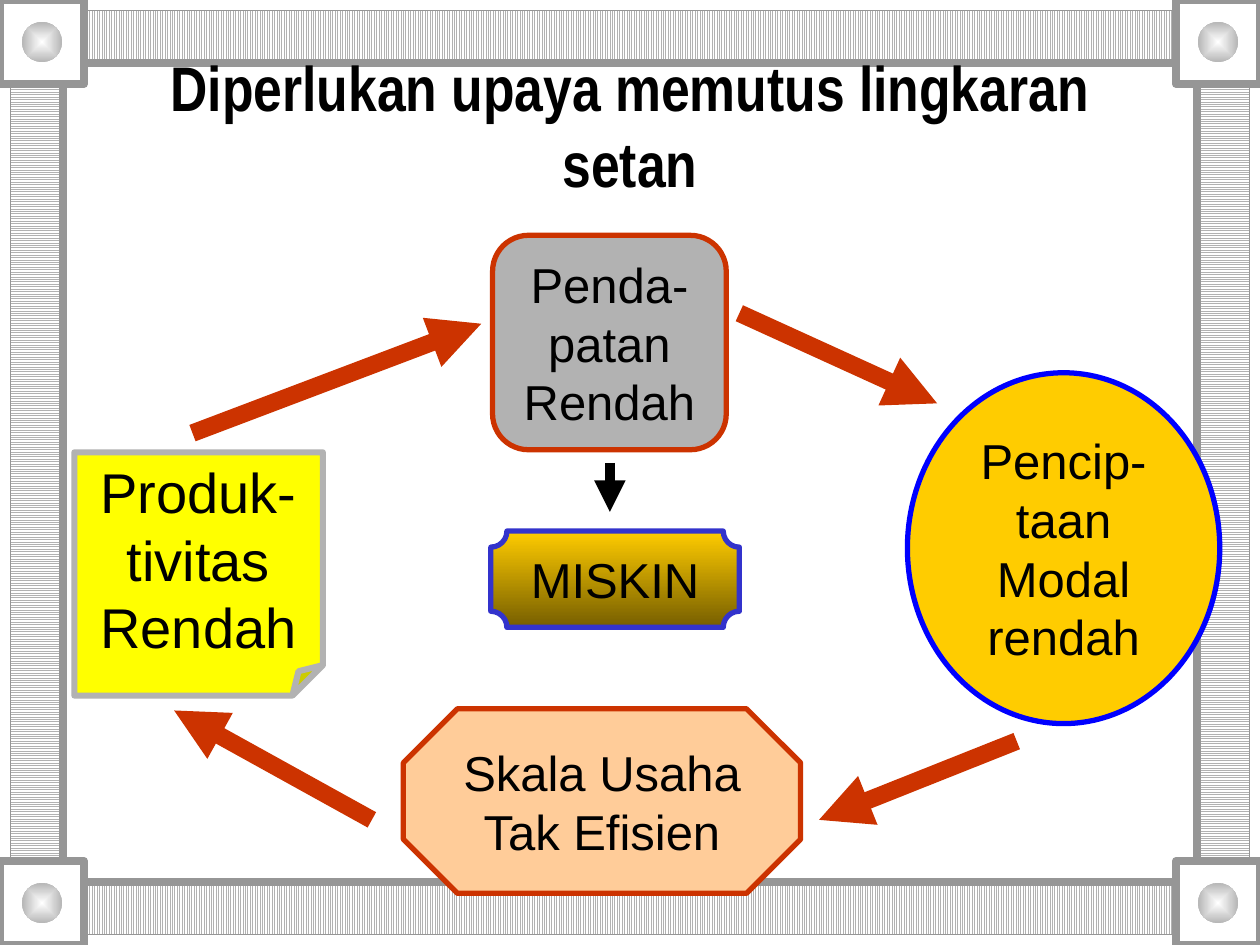
from dataclasses import dataclass
from itertools import product

from pptx import Presentation
from pptx.dml.color import RGBColor
from pptx.enum.dml import MSO_PATTERN
from pptx.enum.shapes import MSO_CONNECTOR, MSO_SHAPE
from pptx.enum.text import MSO_ANCHOR, PP_ALIGN
from pptx.oxml import parse_xml
from pptx.oxml.ns import nsdecls, qn
from pptx.shapes.autoshape import Shape
from pptx.slide import Slide
from pptx.text.text import TextFrame
from pptx.util import Pt

BLACK = RGBColor(0x00, 0x00, 0x00)
WHITE = RGBColor(0xFF, 0xFF, 0xFF)
SILVER = RGBColor(0xB2, 0xB2, 0xB2)
BALL_EDGE = RGBColor(0xB6, 0xB6, 0xB6)
FRAME_GRAY = RGBColor(0x96, 0x96, 0x96)
RUST = RGBColor(0xCC, 0x33, 0x00)
GOLD = RGBColor(0xFF, 0xCC, 0x00)
DARK_GOLD = RGBColor(0x76, 0x5E, 0x00)
PEACH = RGBColor(0xFF, 0xCC, 0x99)
YELLOW = RGBColor(0xFF, 0xFF, 0x00)
BLUE = RGBColor(0x00, 0x00, 0xFF)
INDIGO = RGBColor(0x33, 0x33, 0xCC)

WIDTH, HEIGHT = 720, 540
EDGE, BAND, CORNER, BALL = 6, 30, 48, 23
INNER = EDGE + BAND

Box = tuple[float, float, float, float]
Point = tuple[float, float]


@dataclass
class Node:
    text: str
    kind: MSO_SHAPE
    box: Box
    fill: RGBColor
    line: RGBColor
    line_width: float = 3
    size: float = 28
    adjustment: float | None = None
    fade_to: RGBColor | None = None


@dataclass
class Arrow:
    start: Point
    end: Point
    color: RGBColor = RUST
    width: float = 10


NODES = [
    Node("Penda-patan Rendah", MSO_SHAPE.ROUNDED_RECTANGLE,
         (281.5, 134.5, 133.5, 122.5), SILVER, RUST, adjustment=0.167),
    Node("Pencip-taan Modal rendah", MSO_SHAPE.OVAL,
         (518.5, 213, 178.5, 200.5), GOLD, BLUE),
    Node("Skala Usaha Tak Efisien", MSO_SHAPE.OCTAGON,
         (230.5, 405, 227, 105.5), PEACH, RUST, adjustment=0.293),
    Node("Produk-tivitas Rendah", MSO_SHAPE.FOLDED_CORNER,
         (42.5, 258.5, 142, 139), YELLOW, SILVER, 3.5, 32, 0.125),
    Node("MISKIN", MSO_SHAPE.PLAQUE,
         (280.5, 303.5, 142, 55), GOLD, INDIGO, adjustment=0.167, fade_to=DARK_GOLD),
]

ARROWS = [
    Arrow((348.5, 264.5), (348.5, 292.5), BLACK, 6),
    Arrow((422.5, 179), (535.5, 230.5)),
    Arrow((581, 423.5), (468, 468.5)),
    Arrow((212.5, 468.5), (99.5, 406)),
    Arrow((110, 247.5), (275, 185)),
]


def add_shape(slide: Slide, kind: MSO_SHAPE, box: Box, fill: RGBColor | None = None,
              line: RGBColor | None = None, line_width: float = 1) -> Shape:
    shape = slide.shapes.add_shape(kind, *(Pt(length) for length in box))
    shape.shadow.inherit = False
    if fill is None:
        shape.fill.background()
    else:
        shape.fill.solid()
        shape.fill.fore_color.rgb = fill
    if line is None:
        shape.line.fill.background()
    else:
        shape.line.color.rgb = line
        shape.line.width = Pt(line_width)
    return shape


def set_gradient(shape: Shape, first: RGBColor, last: RGBColor) -> None:
    shape.fill.gradient()
    shape.fill.gradient_angle = 270
    for stop, color in zip(shape.fill.gradient_stops, (first, last)):
        stop.color.rgb = color


def set_adjustment(shape: Shape, value: float) -> None:
    geometry = shape._element.spPr.find(qn("a:prstGeom"))
    geometry.replace(geometry.find(qn("a:avLst")), parse_xml(
        f'<a:avLst {nsdecls("a")}>'
        f'<a:gd name="adj" fmla="val {round(value * 100000)}"/></a:avLst>'))


def write_text(frame: TextFrame, text: str, size: float, font: str, bold: bool = False) -> None:
    frame.word_wrap = True
    frame.vertical_anchor = MSO_ANCHOR.MIDDLE
    paragraph = frame.paragraphs[0]
    paragraph.text = text
    paragraph.alignment = PP_ALIGN.CENTER
    paragraph.font.size = Pt(size)
    paragraph.font.name = font
    paragraph.font.bold = bold
    paragraph.font.color.rgb = BLACK


def add_band(slide: Slide, box: Box, pattern: MSO_PATTERN) -> None:
    band = add_shape(slide, MSO_SHAPE.RECTANGLE, box)
    band.fill.patterned()
    band.fill.pattern = pattern
    band.fill.fore_color.rgb = SILVER
    band.fill.back_color.rgb = WHITE


def add_corner(slide: Slide, left: float, top: float) -> None:
    add_shape(slide, MSO_SHAPE.RECTANGLE, (left, top, CORNER, CORNER), WHITE, FRAME_GRAY, 4.5)
    inset = (CORNER - BALL) / 2
    ball = add_shape(slide, MSO_SHAPE.OVAL, (left + inset, top + inset, BALL, BALL))
    set_gradient(ball, WHITE, BALL_EDGE)
    linear = ball._element.spPr.find(qn("a:gradFill")).find(qn("a:lin"))
    linear.getparent().replace(linear, parse_xml(
        f'<a:path {nsdecls("a")} path="shape">'
        '<a:fillToRect l="50000" t="50000" r="50000" b="50000"/></a:path>'))


def add_frame(slide: Slide) -> None:
    inner_width, inner_height = WIDTH - 2 * INNER, HEIGHT - 2 * INNER
    for top in (EDGE, HEIGHT - INNER):
        add_band(slide, (INNER, top, inner_width, BAND), MSO_PATTERN.NARROW_VERTICAL)
    for left in (EDGE, WIDTH - INNER):
        add_band(slide, (left, INNER, BAND, inner_height), MSO_PATTERN.NARROW_HORIZONTAL)
    for margin, line_width in ((INNER, 4.5), (EDGE, 1)):
        box = (margin, margin, WIDTH - 2 * margin, HEIGHT - 2 * margin)
        add_shape(slide, MSO_SHAPE.RECTANGLE, box, None, FRAME_GRAY, line_width)
    for left, top in product((0, WIDTH - CORNER), (0, HEIGHT - CORNER)):
        add_corner(slide, left, top)


def add_title(slide: Slide, text: str) -> None:
    title = slide.shapes.add_textbox(Pt(54), Pt(26), Pt(612), Pt(90))
    write_text(title.text_frame, text, 36, "Arial Narrow", bold=True)


def add_node(slide: Slide, node: Node) -> None:
    shape = add_shape(slide, node.kind, node.box, node.fill, node.line, node.line_width)
    if node.adjustment is not None:
        set_adjustment(shape, node.adjustment)
    if node.fade_to is not None:
        set_gradient(shape, node.fill, node.fade_to)
    write_text(shape.text_frame, node.text, node.size, "Arial")


def add_arrow(slide: Slide, arrow: Arrow) -> None:
    ends = (Pt(length) for length in (*arrow.start, *arrow.end))
    connector = slide.shapes.add_connector(MSO_CONNECTOR.STRAIGHT, *ends)
    connector.line.color.rgb = arrow.color
    connector.line.width = Pt(arrow.width)
    connector.line._get_or_add_ln().append(
        parse_xml(f'<a:tailEnd {nsdecls("a")} type="triangle"/>'))
    connector._element.spPr.append(parse_xml(f'<a:effectLst {nsdecls("a")}/>'))


def main() -> None:
    presentation = Presentation()
    presentation.slide_width, presentation.slide_height = Pt(WIDTH), Pt(HEIGHT)
    slide = presentation.slides.add_slide(presentation.slide_layouts[6])
    add_frame(slide)
    add_title(slide, "Diperlukan upaya memutus lingkaran setan")
    for node in NODES:
        add_node(slide, node)
    for arrow in ARROWS:
        add_arrow(slide, arrow)
    presentation.save("out.pptx")


if __name__ == "__main__":
    main()
